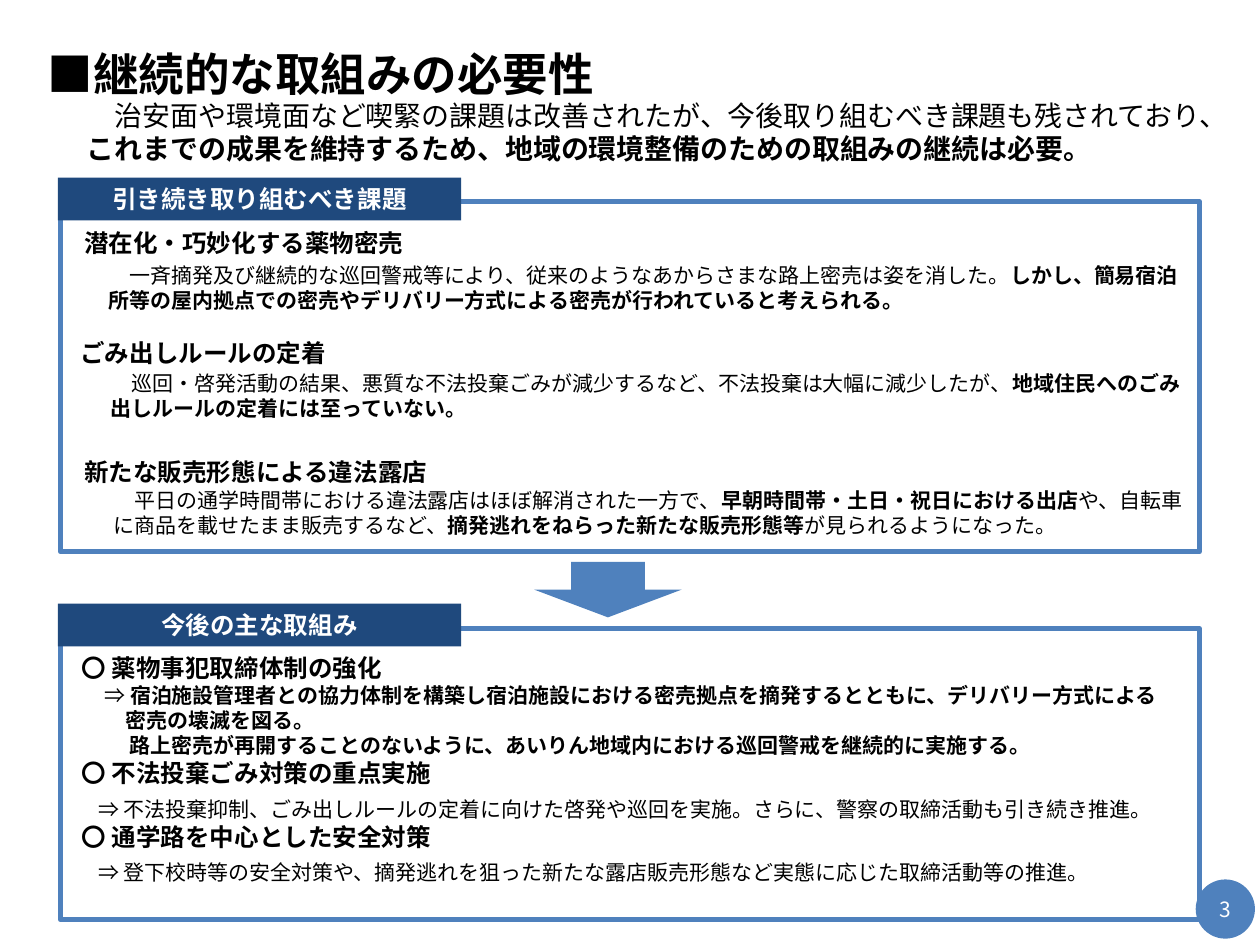
from pptx import Presentation
from pptx import util as u
from pptx.dml.color import RGBColor
from pptx.enum import shapes, text
from pptx.oxml.ns import qn
from lxml import etree

BLACK = RGBColor(0x00, 0x00, 0x00)
WHITE = RGBColor(0xFF, 0xFF, 0xFF)
BLUE = RGBColor(0x4F, 0x81, 0xBD)
NAVY = RGBColor(0x1F, 0x49, 0x7D)
GOTHIC, LATO = "Noto Sans CJK JP", "Lato"

prs = Presentation()
prs.slide_width, prs.slide_height = u.Inches(10), u.Inches(7.5)
CELL = prs.slide_width // 1000
s = prs.slides.add_slide(prs.slide_layouts[6])


def add_shape(kind, box, fill=None, line=None):
    sp = s.shapes.add_shape(kind, *[n * CELL for n in box])
    sp.shadow.inherit = False
    if fill is None:
        sp.fill.background()
    else:
        sp.fill.solid()
        sp.fill.fore_color.rgb = fill
    if line is None:
        sp.line.fill.background()
    else:
        sp.line.color.rgb = line
        sp.line.width = u.Pt(2.75)
    return sp


def add_text(p, runs, size, font=GOTHIC, color=BLACK, left=0, first=0, **layout):
    for key, value in layout.items():
        setattr(p, key, value)
    pPr = p._p.get_or_add_pPr()
    pPr.set("marL", str(left * CELL))
    pPr.set("indent", str(int(first)))
    for words, bold in runs:
        r = p.add_run()
        r.text = words
        for key, value in {"size": u.Pt(size), "bold": bold, "name": font}.items():
            setattr(r.font, key, value)
        r.font.color.rgb = color
        ea = etree.SubElement(r._r.get_or_add_rPr(), qn("a:ea"))
        ea.set("typeface", font)


page = add_shape(shapes.MSO_SHAPE.OVAL, (949, 698, 47, 47), fill=BLUE)
page.text_frame.vertical_anchor = text.MSO_ANCHOR.MIDDLE
add_text(page.text_frame.paragraphs[0], [("3", False)], 12, color=WHITE,
         alignment=text.PP_ALIGN.CENTER)

title = s.shapes.add_textbox(*[n * CELL for n in (28, 29, 843, 54)])
title.text_frame.word_wrap = True
add_text(title.text_frame.paragraphs[0], [("■継続的な取組みの必要性", True)], 26,
         line_spacing=u.Pt(33))

bodies = [
    ((57, 72, 916, 69), 16, [
        ("治安面や環境面など喫緊の課題は改善されたが、今後取り組むべき課題も残されており、", False),
        ("これまでの成果を維持するため、地域の環境整備のための取組みの継続は必要。", True)]),
    ((74, 202, 879, 62), 12, [
        ("一斉摘発及び継続的な巡回警戒等により、従来のようなあからさまな路上密売は姿を消した。", False),
        ("しかし、簡易宿泊所等の屋内拠点での密売やデリバリー方式による密売が行われていると考えられる。", True)]),
    ((76, 288, 876, 53), 12, [
        ("巡回・啓発活動の結果、悪質な不法投棄ごみが減少するなど、不法投棄は大幅に減少したが、", False),
        ("地域住民へのごみ出しルールの定着には至っていない。", True)]),
    ((78, 381, 880, 57), 12, [
        ("平日の通学時間帯における違法露店はほぼ解消された一方で、", False),
        ("早朝時間帯・土日・祝日における出店", True),
        ("や、自転車に商品を載せたまま販売するなど、", False),
        ("摘発逃れをねらった新たな販売形態等", True),
        ("が見られるようになった。", False)]),
]
for box, size, runs in bodies:
    tf = s.shapes.add_textbox(*[n * CELL for n in box]).text_frame
    for key, value in {"word_wrap": True, "margin_left": 12 * CELL, "margin_right": 12 * CELL,
                       "margin_top": 6 * CELL, "margin_bottom": 6 * CELL}.items():
        setattr(tf, key, value)
    add_text(tf.paragraphs[0], runs, size, font=LATO, first=u.Pt(size),
             space_before=u.Pt(8), space_after=u.Pt(8))

issues = [
    (57, 176, "潜在化・巧妙化する薬物密売"),
    (54, 263, "ごみ出しルールの定着"),
    (57, 357, "新たな販売形態による違法露店"),
]
for x, y, words in issues:
    tf = s.shapes.add_textbox(*[n * CELL for n in (x, y, 485, 34)]).text_frame
    tf.word_wrap = True
    tf.vertical_anchor = text.MSO_ANCHOR.MIDDLE
    add_text(tf.paragraphs[0], [(words, True)], 14)

plans = s.shapes.add_textbox(*[n * CELL for n in (36, 513, 921, 195)])
tf = plans.text_frame
tf.word_wrap = True
plan_lines = [
    (19, 14, 17, [("〇 薬物事犯取締体制の強化", True)]),
    (37, 12, 14.4, [
        ("⇒ ", False),
        ("宿泊施設管理者との協力体制を構築し宿泊施設における密売拠点を摘発するとともに、デリバリー方式による", True)]),
    (54, 12, 14.4, [("密売の壊滅を図る。", True)]),
    (57, 12, 14.4, [("路上密売が再開することのないように、あいりん地域内における巡回警戒を継続的に実施する。", True)]),
    (19, 14, 17, [("〇 不法投棄ごみ対策の重点実施", True)]),
    (32, 12, 19.2, [("⇒ 不法投棄抑制、ごみ出しルールの定着に向けた啓発や巡回を実施。さらに、警察の取締活動も引き続き推進。", False)]),
    (19, 14, 17, [("〇 通学路を中心とした安全対策", True)]),
    (32, 12, 19.2, [("⇒ 登下校時等の安全対策や、摘発逃れを狙った新たな露店販売形態など実態に応じた取締活動等の推進。", False)]),
]
for i, (left, size, pitch, runs) in enumerate(plan_lines):
    p = tf.add_paragraph() if i else tf.paragraphs[0]
    add_text(p, runs, size, left=left, line_spacing=u.Pt(pitch))

sections = [
    (160, 278, 141, "引き続き取り組むべき課題"),
    (499, 231, 479, "今後の主な取組み"),
]
for top, height, tab_top, words in sections:
    add_shape(shapes.MSO_SHAPE.RECTANGLE, (48, top, 904, height), line=BLUE)
    tab = add_shape(shapes.MSO_SHAPE.RECTANGLE, (46, tab_top, 320, 34), fill=NAVY)
    tab.text_frame.word_wrap = True
    tab.text_frame.vertical_anchor = text.MSO_ANCHOR.MIDDLE
    add_text(tab.text_frame.paragraphs[0], [(words, True)], 14, color=WHITE,
             alignment=text.PP_ALIGN.CENTER)

add_shape(shapes.MSO_SHAPE.DOWN_ARROW, (424, 446, 117, 44), fill=BLUE)

prs.save("out.pptx")
